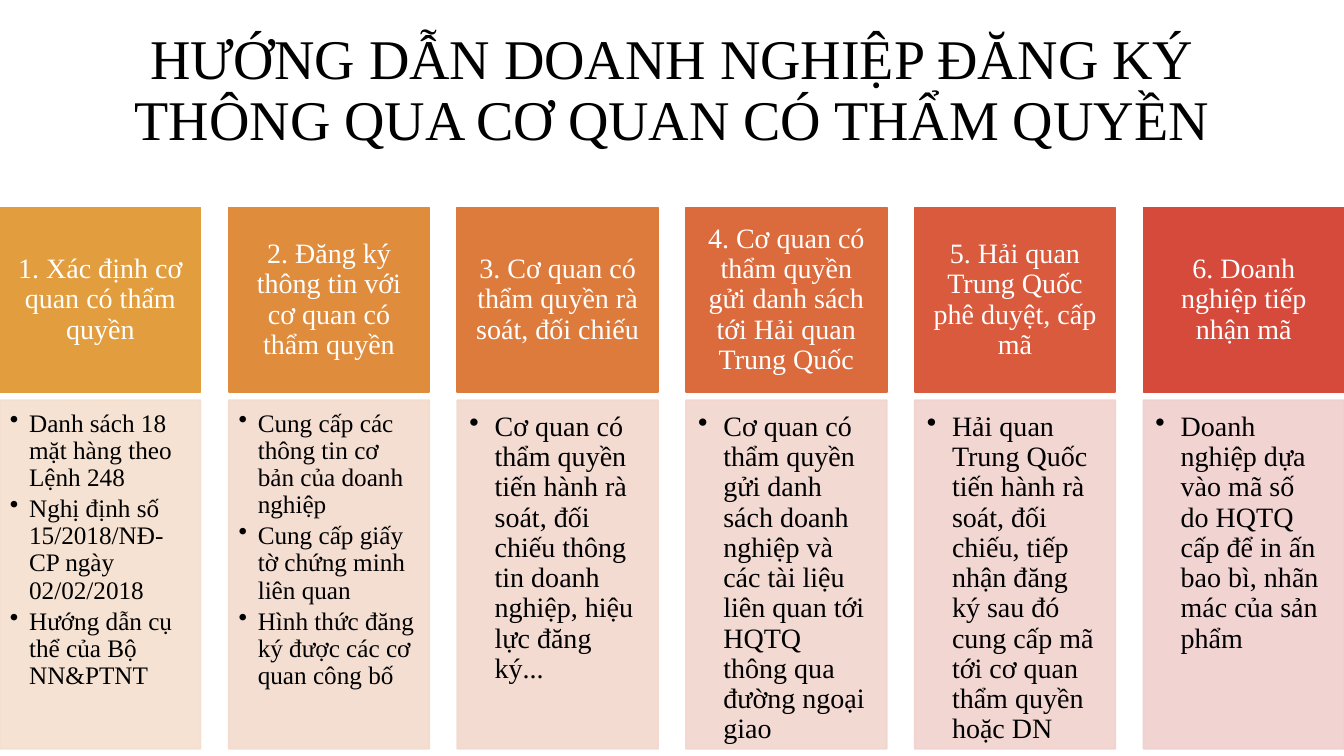
"""Build a six-step slide on registering a business through the competent authority."""
from dataclasses import dataclass

from lxml import etree
from pptx import Presentation, util as u
from pptx.dml.color import RGBColor
from pptx.enum import shapes, text
from pptx.oxml.ns import qn
from pptx.shapes.autoshape import Shape
from pptx.slide import Slide


@dataclass(frozen=True)
class Theme:
    font: str = "Times New Roman"
    ink: str = "000000"
    light: str = "FFFFFF"
    title_size: int = 40
    body_size: int = 20
    small_size: int = 18
    line_width: float = 1.25
    line_spacing: float = 0.9
    panel_opacity: int = 90


@dataclass(frozen=True)
class Grid:
    width: float = 13.33
    height: float = 7.5
    columns: int = 6
    column_width: float = 1.99
    header_top: float = 2.06
    header_height: float = 1.83
    panel_top: float = 3.97
    panel_height: float = 3.46

    def left(self, column: int) -> float:
        return column * (self.width - self.column_width) / (self.columns - 1)


@dataclass(frozen=True)
class TextStyle:
    size: int
    color: str
    insets: tuple[float, float, float, float]
    anchor: text.MSO_ANCHOR = text.MSO_ANCHOR.TOP
    align: text.PP_ALIGN = text.PP_ALIGN.CENTER
    space_after: float = 0
    hanging: float = 0


@dataclass(frozen=True)
class Step:
    heading: str
    header_color: str
    panel_color: str
    points: tuple[str, ...]


THEME = Theme()
GRID = Grid()
TITLE = TextStyle(THEME.title_size, THEME.ink, (0.1, 0.05, 0.1, 0.05), text.MSO_ANCHOR.BOTTOM)
HEADER = TextStyle(THEME.body_size, THEME.light, (0.16, 0.09, 0.16, 0.09),
                   text.MSO_ANCHOR.MIDDLE, space_after=0.35)
PANEL = TextStyle(THEME.body_size, THEME.ink, (0.12, 0.12, 0.16, 0.17),
                  align=text.PP_ALIGN.LEFT, space_after=0.15, hanging=0.25)
SMALL_PANEL = TextStyle(THEME.small_size, THEME.ink, (0.1, 0.1, 0.14, 0.16),
                        align=text.PP_ALIGN.LEFT, space_after=0.15, hanging=0.19)

TITLE_TEXT = "HƯỚNG DẪN DOANH NGHIỆP ĐĂNG KÝ THÔNG QUA CƠ QUAN CÓ THẨM QUYỀN"
STEPS = (
    Step("1. Xác định cơ quan có thẩm quyền", "E29D3E", "F4DFCE",
         ("Danh sách 18 mặt hàng theo Lệnh 248",
          "Nghị định số 15/2018/NĐ-CP ngày 02/02/2018",
          "Hướng dẫn cụ thể của Bộ NN&PTNT")),
    Step("2. Đăng ký thông tin với cơ quan có thẩm quyền", "E08C3D", "F3DBCE",
         ("Cung cấp các thông tin cơ bản của doanh nghiệp",
          "Cung cấp giấy tờ chứng minh liên quan",
          "Hình thức đăng ký được các cơ quan công bố")),
    Step("3. Cơ quan có thẩm quyền rà soát, đối chiếu", "DD7B3D", "F2D8CE",
         ("Cơ quan có thẩm quyền tiến hành rà soát, đối chiếu thông tin doanh nghiệp, "
          "hiệu lực đăng ký...",)),
    Step("4. Cơ quan có thẩm quyền gửi danh sách tới Hải quan Trung Quốc", "DB6A3C", "F1D5CE",
         ("Cơ quan có thẩm quyền gửi danh sách doanh nghiệp và các tài liệu liên quan "
          "tới HQTQ thông qua đường ngoại giao",)),
    Step("5. Hải quan Trung Quốc phê duyệt, cấp mã", "D95A3C", "F1D2CE",
         ("Hải quan Trung Quốc tiến hành rà soát, đối chiếu, tiếp nhận đăng ký sau đó "
          "cung cấp mã tới cơ quan thẩm quyền hoặc DN",)),
    Step("6. Doanh nghiệp tiếp nhận mã", "D64A3B", "F0D0CE",
         ("Doanh nghiệp dựa vào mã số do HQTQ cấp để in ấn bao bì, nhãn mác của sản phẩm",)),
)


def assign(target: object, values: dict[str, object]) -> None:
    for name, value in values.items():
        setattr(target, name, value)


def write(box: Shape, lines: tuple[str, ...], style: TextStyle) -> None:
    frame = box.text_frame
    left, top, right, bottom = map(u.Inches, style.insets)
    assign(frame, {"word_wrap": True, "vertical_anchor": style.anchor,
                   "margin_left": left, "margin_top": top,
                   "margin_right": right, "margin_bottom": bottom})
    for index, line in enumerate(lines):
        para = frame.add_paragraph() if index else frame.paragraphs[0]
        if style.hanging:
            para.level = 1
            properties = para._p.get_or_add_pPr()
            properties.set("marL", str(u.Inches(style.hanging)))
            properties.set("indent", str(-u.Inches(style.hanging)))
            etree.SubElement(properties, qn("a:buChar"), char="•")
        assign(para, {"alignment": style.align, "line_spacing": THEME.line_spacing,
                      "space_after": u.Pt(style.size * style.space_after)})
        span = para.add_run()
        span.text = line
        assign(span.font, {"name": THEME.font, "size": u.Pt(style.size)})
        span.font.color.rgb = RGBColor.from_string(style.color)


def add_block(page: Slide, column: int, top: float, height: float,
              color: str, opacity: int = 100) -> Shape:
    box = page.shapes.add_shape(
        shapes.MSO_SHAPE.RECTANGLE, u.Inches(GRID.left(column)), u.Inches(top),
        u.Inches(GRID.column_width), u.Inches(height))
    box.shadow.inherit = False
    box.line.width = u.Pt(THEME.line_width)
    for paint in (box.fill, box.line.fill):
        paint.solid()
        paint.fore_color.rgb = RGBColor.from_string(color)
    if opacity < 100:
        for tint in box.element.spPr.iter(qn("a:srgbClr")):
            etree.SubElement(tint, qn("a:alpha"), val=str(opacity * 1000))
    return box


def add_step(page: Slide, column: int, step: Step) -> None:
    header = add_block(page, column, GRID.header_top, GRID.header_height, step.header_color)
    write(header, (step.heading,), HEADER)
    panel = add_block(page, column, GRID.panel_top, GRID.panel_height,
                      step.panel_color, THEME.panel_opacity)
    write(panel, step.points, SMALL_PANEL if len(step.points) > 1 else PANEL)


def main() -> None:
    deck = Presentation()
    assign(deck, {"slide_width": u.Inches(GRID.width), "slide_height": u.Inches(GRID.height)})
    page = deck.slides.add_slide(deck.slide_layouts[6])
    for column, step in enumerate(STEPS):
        add_step(page, column, step)
    title = page.shapes.add_textbox(
        u.Inches(GRID.width * 0.03), u.Inches(GRID.height * 0.016),
        u.Inches(GRID.width * 0.94), u.Inches(GRID.height * 0.192))
    write(title, (TITLE_TEXT,), TITLE)
    deck.save("out.pptx")


if __name__ == "__main__":
    main()
